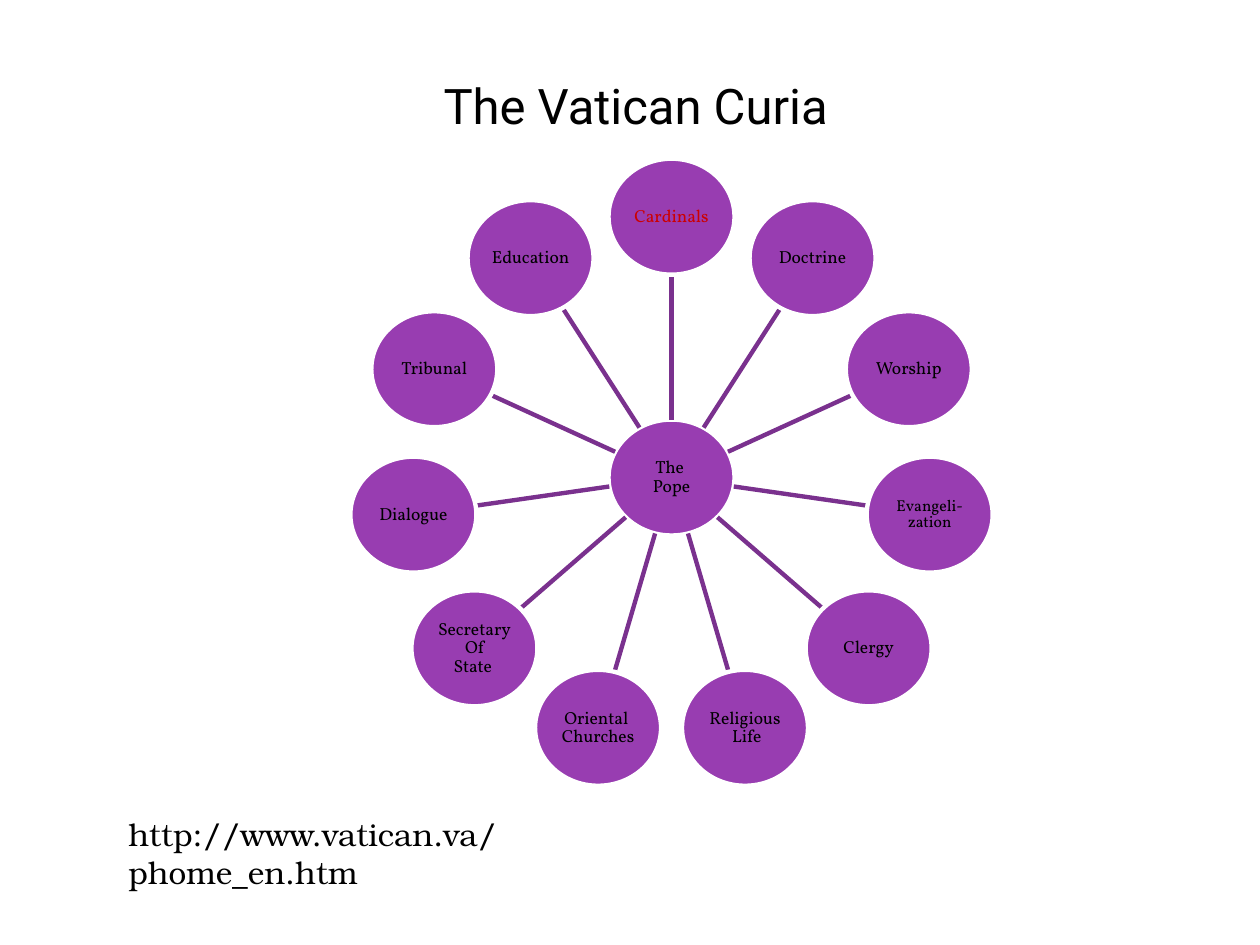
"""Build the slide of the Vatican Curia as a radial diagram."""
from dataclasses import dataclass
from math import cos, hypot, pi, sin

from lxml.etree import SubElement
from pptx import Presentation
from pptx.dml.color import RGBColor
from pptx.enum.shapes import MSO_CONNECTOR as Connector, MSO_SHAPE as Shape
from pptx.enum.text import MSO_ANCHOR as Anchor, MSO_AUTO_SIZE as AutoSize, PP_ALIGN as Align
from pptx.oxml.ns import qn
from pptx.util import Inches, Pt


@dataclass(frozen=True)
class Theme:
    """Colours, fonts and type sizes."""
    disc: str = "983DB1"
    spoke: str = "7A318E"
    white: str = "FFFFFF"
    black: str = "000000"
    red: str = "CC0000"
    title_font: str = "Roboto"
    disc_font: str = "Vollkorn"
    address_font: str = "TeX Gyre Bonum"
    title_size: int = 28
    address_size: int = 18
    disc_size: int = 10
    small_size: int = 9
    stroke: float = 2.5


THEME = Theme()
CENTER_X, CENTER_Y, ORBIT = 5.33, 3.79, 2.07
DISC_WIDTH, DISC_HEIGHT = 1.0, 0.92


@dataclass(frozen=True)
class Office:
    """One disc of the diagram."""
    label: str
    color: str = THEME.black
    size: int = THEME.disc_size


POPE = Office("The \nPope")
OFFICES = [
    Office("Cardinals", color=THEME.red),
    Office("Doctrine"),
    Office("Worship"),
    Office("Evangeli-zation", size=THEME.small_size),
    Office("Clergy"),
    Office("Religious\n Life"),
    Office("Oriental \nChurches"),
    Office("Secretary\nOf\nState "),
    Office("Dialogue"),
    Office("Tribunal"),
    Office("Education"),
]


def write_text(shape, text: str, *, font: str, size: int, color: str = THEME.black,
               align=Align.LEFT, anchor=Anchor.TOP, inset: tuple = (0.1, 0.05),
               line_spacing: float = 1.0) -> None:
    """Fill a shape with formatted text, one paragraph per line."""
    frame = shape.text_frame
    frame.text = text
    frame.word_wrap = True
    frame.auto_size = AutoSize.NONE
    frame.vertical_anchor = anchor
    frame.margin_left = frame.margin_right = Inches(inset[0])
    frame.margin_top = frame.margin_bottom = Inches(inset[1])
    for paragraph in frame.paragraphs:
        paragraph.alignment = align
        paragraph.line_spacing = line_spacing
        for run in paragraph.runs:
            run.font.name = font
            run.font.size = Pt(size)
            run.font.color.rgb = RGBColor.from_string(color)


def draw_disc(slide, office: Office, x: float, y: float) -> None:
    """Draw a labelled disc centred on a point."""
    disc = slide.shapes.add_shape(
        Shape.OVAL, Inches(x - DISC_WIDTH / 2), Inches(y - DISC_HEIGHT / 2),
        Inches(DISC_WIDTH), Inches(DISC_HEIGHT))
    disc.shadow.inherit = False
    disc.fill.solid()
    disc.fill.fore_color.rgb = RGBColor.from_string(THEME.disc)
    disc.line.color.rgb = RGBColor.from_string(THEME.white)
    disc.line.width = Pt(THEME.stroke)
    write_text(disc, office.label, font=THEME.disc_font, size=office.size, color=office.color,
               align=Align.CENTER, anchor=Anchor.MIDDLE, inset=(0.01, 0.01), line_spacing=0.87)


def orbit_point(angle: float, distance: float) -> tuple[float, float]:
    """Return the point at a clockwise angle from the top of the hub."""
    return CENTER_X + distance * sin(angle), CENTER_Y - distance * cos(angle)


def draw_spoke(slide, angle: float) -> None:
    """Draw a line from the edge of the hub to the edge of an outer disc."""
    half_width, half_height = DISC_WIDTH / 2, DISC_HEIGHT / 2
    edge = half_width * half_height / hypot(half_height * sin(angle), half_width * cos(angle))
    start, end = orbit_point(angle, edge), orbit_point(angle, ORBIT - edge)
    spoke = slide.shapes.add_connector(
        Connector.STRAIGHT, *(Inches(value) for value in start + end))
    spoke.line.color.rgb = RGBColor.from_string(THEME.spoke)
    spoke.line.width = Pt(THEME.stroke)
    SubElement(spoke.element.spPr, qn("a:effectLst"))


def main() -> None:
    """Build and save the presentation."""
    presentation = Presentation()
    presentation.slide_width, presentation.slide_height = Inches(10), Inches(7.5)
    slide = presentation.slides.add_slide(presentation.slide_layouts[5])

    draw_disc(slide, POPE, CENTER_X, CENTER_Y)
    for index, office in enumerate(OFFICES):
        angle = 2 * pi * index / len(OFFICES)
        draw_spoke(slide, angle)
        draw_disc(slide, office, *orbit_point(angle, ORBIT))

    title = slide.shapes.title
    title.left, title.top = Inches(3.42), Inches(0.55)
    title.width, title.height = Inches(3.83), Inches(0.57)
    write_text(title, "The Vatican Curia", font=THEME.title_font, size=THEME.title_size)

    address = slide.shapes.add_textbox(Inches(0.92), Inches(6.42), Inches(4.32), Inches(0.4))
    write_text(address, "http://www.vatican.va/phome_en.htm",
               font=THEME.address_font, size=THEME.address_size)
    presentation.save("out.pptx")


if __name__ == "__main__":
    main()
